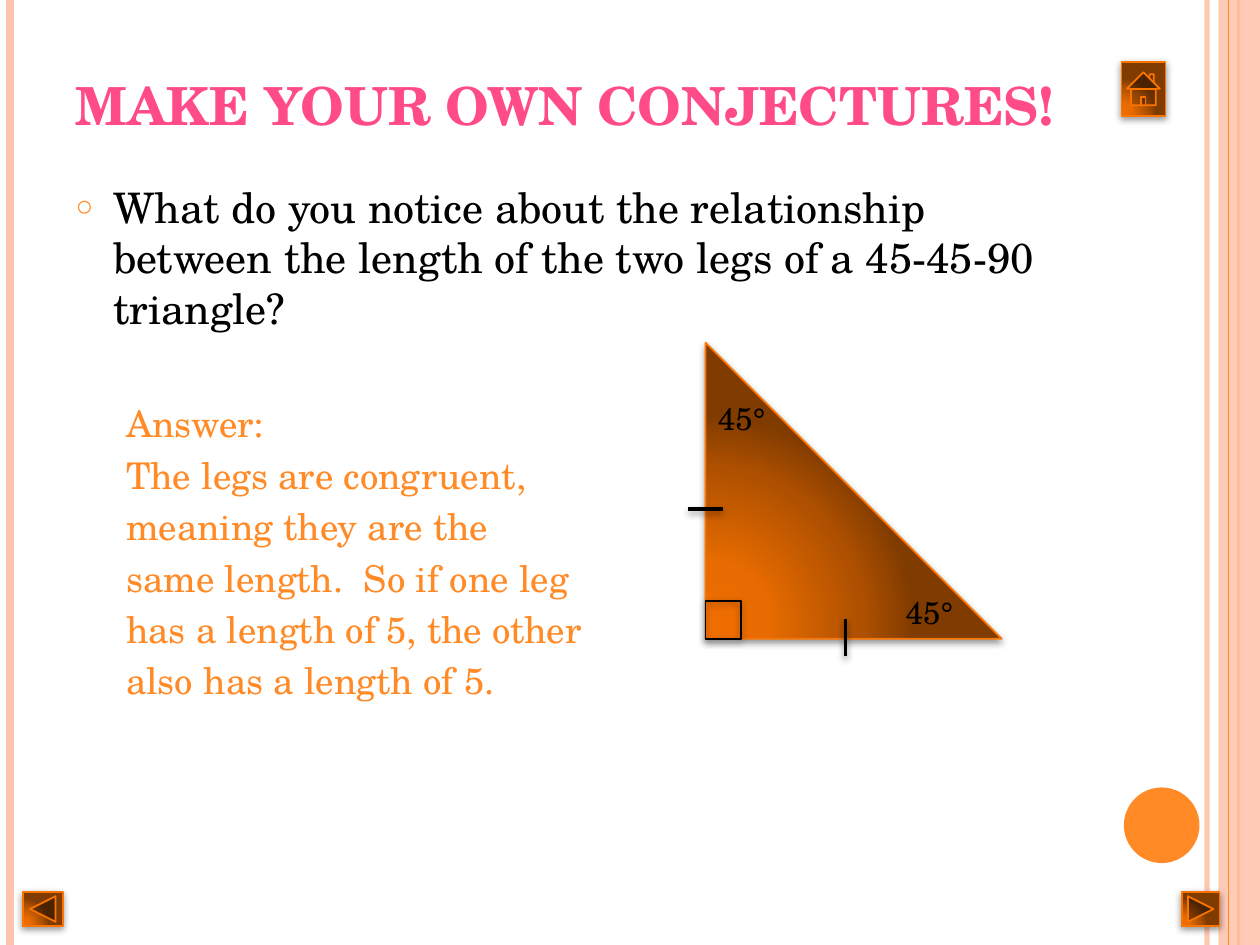
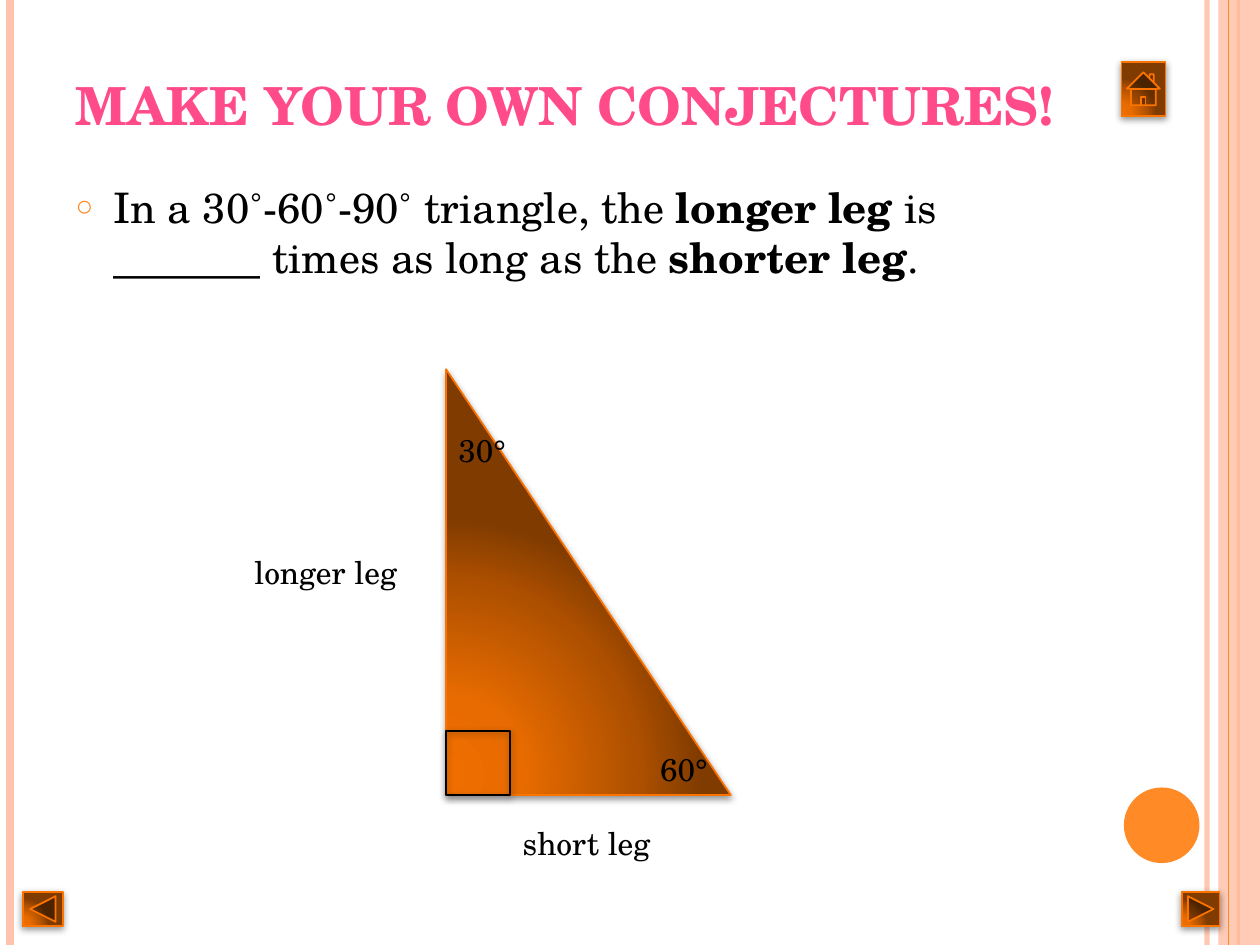
"""Build two geometry slides on conjectures about special right triangles."""
from dataclasses import dataclass
from typing import NamedTuple

from pptx import Presentation
from pptx import util as u
from pptx.dml.color import RGBColor
from pptx.enum import shapes, text
from pptx.oxml import parse_xml
from pptx.oxml.ns import nsdecls, qn


class Shadow(NamedTuple):
    """A soft shadow falling straight down, in points and percent."""
    opacity: int
    blur: float
    distance: float


@dataclass(frozen=True)
class Theme:
    """Colours, font, type sizes and effects of the deck."""
    font: str = "TeX Gyre Schola"
    ink: str = "000000"
    title: str = "FF4B89"
    accent: str = "FF8A26"
    band: str = "FFC4AD"
    edge: str = "FB7400"
    glow: tuple = ((0, "F06E00"), (30, "E76B00"), (75, "AE5000"), (100, "803B00"))
    title_size: int = 30
    body_size: int = 24
    answer_size: int = 21
    label_size: int = 18
    bullet_percent: int = 70
    shape_shadow: Shadow = Shadow(42, 4, 1.6)
    tick_shadow: Shadow = Shadow(40, 4, 2)


THEME = Theme()


class Box(NamedTuple):
    """A frame in inches."""
    left: float
    top: float
    width: float
    height: float

    def emu(self) -> list:
        """Return the frame as lengths."""
        return [u.Inches(side) for side in self]


class Stroke(NamedTuple):
    """A straight line in inches, its colour, width in points and opacity."""
    x1: float
    y1: float
    x2: float
    y2: float
    color: str
    width: float
    opacity: int = 100


class Label(NamedTuple):
    """A short text and its frame."""
    words: str
    box: Box


class Span(NamedTuple):
    """A piece of body text."""
    words: str
    bold: bool = False


class Button(NamedTuple):
    """A navigation button."""
    kind: shapes.MSO_SHAPE
    box: Box


@dataclass(frozen=True)
class Triangle:
    """A right triangle with its corner mark and angle labels."""
    box: Box
    corner_width: float
    corner_height: float
    angles: tuple


@dataclass(frozen=True)
class Lesson:
    """The content of one slide."""
    question: tuple
    triangle: Triangle
    answer: tuple = ()
    ticks: tuple = ()
    leg_labels: tuple = ()


TITLE = "MAKE YOUR OWN CONJECTURES!"
TITLE_BOX = Box(0.5, 0.3, 8.17, 0.83)
BODY_BOX = Box(0.5, 1.39, 8.17, 5.69)
BAND_BOX = Box(9.67, 0, 0.33, 7.5)
DISC_BOX = Box(8.92, 6.25, 0.6, 0.6)
STRIPES_BELOW = (
    Stroke(9.58, 0, 9.58, 7.5, THEME.band, 3, 93),
    Stroke(0.08, 0, 0.08, 7.5, THEME.band, 4.5),
    Stroke(9.83, 0, 9.83, 7.5, THEME.accent, 1.5),
)
STRIPE_ABOVE = Stroke(9.75, 0, 9.75, 7.5, THEME.accent, 0.75)
BUTTONS = (
    Button(shapes.MSO_SHAPE.ACTION_BUTTON_HOME, Box(8.9, 0.49, 0.35, 0.43)),
    Button(shapes.MSO_SHAPE.ACTION_BUTTON_FORWARD_OR_NEXT, Box(9.38, 7.08, 0.3, 0.27)),
    Button(shapes.MSO_SHAPE.ACTION_BUTTON_BACK_OR_PREVIOUS, Box(0.18, 7.08, 0.32, 0.27)),
)
LESSONS = (
    Lesson(
        question=(Span("What do you notice about the relationship between the length "
                       "of the two legs of a 45-45-90 triangle?"),),
        answer=("Answer:", "The legs are congruent,", "meaning they are the",
                "same length.  So if one leg", "has a length of 5, the other",
                "also has a length of 5."),
        triangle=Triangle(Box(5.6, 2.72, 2.35, 2.35), 0.28, 0.3, (
            Label("45°", Box(7.09, 4.66, 0.67, 0.4)),
            Label("45°", Box(5.6, 3.12, 0.67, 0.4)))),
        ticks=(Stroke(5.46, 4.04, 5.74, 4.04, THEME.ink, 2),
               Stroke(6.71, 4.91, 6.71, 5.21, THEME.ink, 2)),
    ),
    Lesson(
        question=(Span("In a 30˚-60˚-90˚ triangle, the "), Span("longer leg ", True),
                  Span("is _______ times as long as the "), Span("shorter leg", True),
                  Span(".")),
        triangle=Triangle(Box(3.54, 2.93, 2.26, 3.38), 0.51, 0.51, (
            Label("30°", Box(3.54, 3.37, 0.67, 0.4)),
            Label("60°", Box(5.14, 5.9, 0.67, 0.4)))),
        leg_labels=(Label("longer leg", Box(1.92, 4.34, 2.48, 0.4)),
                    Label("short leg", Box(4.05, 6.49, 2.48, 0.4))),
    ),
)


def rgb(color: str) -> RGBColor:
    """Turn a hex colour into an RGBColor."""
    return RGBColor.from_string(color)


def style_runs(para, size: float, color: str) -> None:
    """Give every run of a paragraph the deck font, a size and a colour."""
    for span in para.runs:
        span.font.name = THEME.font
        span.font.size = u.Pt(size)
        span.font.color.rgb = rgb(color)


def set_effect(item, shadow: Shadow | None = None) -> None:
    """Replace the inherited effect by the given shadow or by none."""
    inner = ""
    if shadow:
        inner = (f'<a:outerShdw blurRad="{u.Pt(shadow.blur)}" dist="{u.Pt(shadow.distance)}" '
                 f'dir="5400000" rotWithShape="0"><a:srgbClr val="{THEME.ink}">'
                 f'<a:alpha val="{shadow.opacity * 1000}"/></a:srgbClr></a:outerShdw>')
    item.element.spPr.append(
        parse_xml(f'<a:effectLst {nsdecls("a")}>{inner}</a:effectLst>'))


def set_opacity(item, percent: int) -> None:
    """Make the colours of a shape or line partly transparent."""
    for color in item.element.spPr.iter(qn("a:srgbClr")):
        color.append(parse_xml(f'<a:alpha {nsdecls("a")} val="{percent * 1000}"/>'))


def add_stroke(page, stroke: Stroke, shadow: Shadow | None = None):
    """Draw a straight line."""
    ends = [u.Inches(end) for end in stroke[:4]]
    line = page.shapes.add_connector(shapes.MSO_CONNECTOR.STRAIGHT, *ends)
    line.line.color.rgb = rgb(stroke.color)
    line.line.width = u.Pt(stroke.width)
    if stroke.opacity < 100:
        set_opacity(line, stroke.opacity)
    set_effect(line, shadow)
    return line


def add_flat(page, kind: shapes.MSO_SHAPE, box: Box, color: str):
    """Draw a plain filled shape without outline."""
    shape = page.shapes.add_shape(kind, *box.emu())
    shape.fill.solid()
    shape.fill.fore_color.rgb = rgb(color)
    shape.line.fill.background()
    set_effect(shape)
    return shape


def add_outlined(holder, kind: shapes.MSO_SHAPE, box: Box, color: str, glowing: bool) -> None:
    """Draw an outlined, shadowed shape that glows or stays hollow."""
    shape = holder.shapes.add_shape(kind, *box.emu())
    if glowing:
        stops = "".join(f'<a:gs pos="{place * 1000}"><a:srgbClr val="{tint}"/></a:gs>'
                        for place, tint in THEME.glow)
        shape.element.spPr.insert(2, parse_xml(
            f'<a:gradFill {nsdecls("a")} rotWithShape="1"><a:gsLst>{stops}</a:gsLst>'
            '<a:path path="circle"><a:fillToRect l="5000" t="100000" r="120000" b="10000"/>'
            '</a:path></a:gradFill>'))
    else:
        shape.fill.background()
    shape.line.color.rgb = rgb(color)
    shape.line.width = u.Pt(1)
    set_effect(shape, THEME.shape_shadow)


def add_label(holder, label: Label) -> None:
    """Write a short text."""
    box = holder.shapes.add_textbox(*label.box.emu())
    box.text_frame.word_wrap = True
    box.text_frame.text = label.words
    style_runs(box.text_frame.paragraphs[0], THEME.label_size, THEME.ink)


def add_triangle(page, triangle: Triangle) -> None:
    """Draw a right triangle with its corner mark and angles as one group."""
    group = page.shapes.add_group_shape()
    box = triangle.box
    corner = Box(box.left, box.top + box.height - triangle.corner_height,
                 triangle.corner_width, triangle.corner_height)
    add_outlined(group, shapes.MSO_SHAPE.RIGHT_TRIANGLE, box, THEME.edge, True)
    add_outlined(group, shapes.MSO_SHAPE.RECTANGLE, corner, THEME.ink, False)
    for label in triangle.angles:
        add_label(group, label)


def place(holder, box: Box, anchor: text.MSO_ANCHOR):
    """Move a placeholder and return its text frame."""
    holder.left, holder.top, holder.width, holder.height = box.emu()
    frame = holder.text_frame
    frame.auto_size = text.MSO_AUTO_SIZE.NONE
    frame.vertical_anchor = anchor
    return frame


def set_list(para, margin: float, before: float, bullet: str) -> None:
    """Set the hanging indent, space before and bullet of a paragraph."""
    para.space_before = u.Pt(before)
    props = para._p.get_or_add_pPr()
    props.set("marL", str(u.Inches(margin)))
    props.set("indent", str(u.Inches(-0.3)))
    marks = [f'<a:buNone {nsdecls("a")}/>']
    if bullet:
        marks = [f'<a:buClr {nsdecls("a")}><a:srgbClr val="{THEME.accent}"/></a:buClr>',
                 f'<a:buSzPct {nsdecls("a")} val="{THEME.bullet_percent * 1000}"/>',
                 f'<a:buChar {nsdecls("a")} char="{bullet}"/>']
    for mark in marks:
        props.append(parse_xml(mark))


def write_title(page) -> None:
    """Fill the title placeholder."""
    frame = place(page.shapes.title, TITLE_BOX, text.MSO_ANCHOR.BOTTOM)
    frame.text = TITLE
    para = frame.paragraphs[0]
    para.alignment = text.PP_ALIGN.LEFT
    style_runs(para, THEME.title_size, THEME.title)
    para.runs[0].font.bold = True


def write_body(page, lesson: Lesson) -> None:
    """Fill the body placeholder with the question and its answer."""
    frame = place(page.placeholders[1], BODY_BOX, text.MSO_ANCHOR.TOP)
    para = frame.paragraphs[0]
    for piece in lesson.question:
        span = para.add_run()
        span.text = piece.words
        span.font.bold = piece.bold
    style_runs(para, THEME.body_size, THEME.ink)
    set_list(para, 0.3, 6, "○")
    for row, words in enumerate(lesson.answer):
        para = frame.add_paragraph()
        para.text = words
        para.level = 1
        style_runs(para, THEME.answer_size, THEME.accent)
        set_list(para, 0.7, 4.2 if row else 39, "")


def decorate_layout(page, layout) -> None:
    """Draw the side bands and the disc once and move them to the layout."""
    parts = [add_stroke(page, stripe) for stripe in STRIPES_BELOW]
    band = add_flat(page, shapes.MSO_SHAPE.RECTANGLE, BAND_BOX, THEME.band)
    set_opacity(band, 87)
    parts += [band, add_stroke(page, STRIPE_ABOVE),
              add_flat(page, shapes.MSO_SHAPE.OVAL, DISC_BOX, THEME.accent)]
    for number, part in enumerate(parts, 101):
        part.element.xpath(".//p:cNvPr")[0].set("id", str(number))
        layout.shapes.element.append(part.element)


def add_lesson(page, lesson: Lesson) -> None:
    """Compose one slide."""
    write_title(page)
    write_body(page, lesson)
    add_triangle(page, lesson.triangle)
    for tick in lesson.ticks:
        add_stroke(page, tick, THEME.tick_shadow)
    for label in lesson.leg_labels:
        add_label(page, label)
    for button in BUTTONS:
        add_outlined(page, button.kind, button.box, THEME.edge, True)


def main() -> None:
    """Build and save the deck."""
    deck = Presentation()
    deck.slide_width, deck.slide_height = u.Inches(10), u.Inches(7.5)
    layout = deck.slide_layouts[1]
    pages = [deck.slides.add_slide(layout) for _ in LESSONS]
    decorate_layout(pages[0], layout)
    for page, lesson in zip(pages, LESSONS):
        add_lesson(page, lesson)
    deck.save("out.pptx")


if __name__ == "__main__":
    main()
